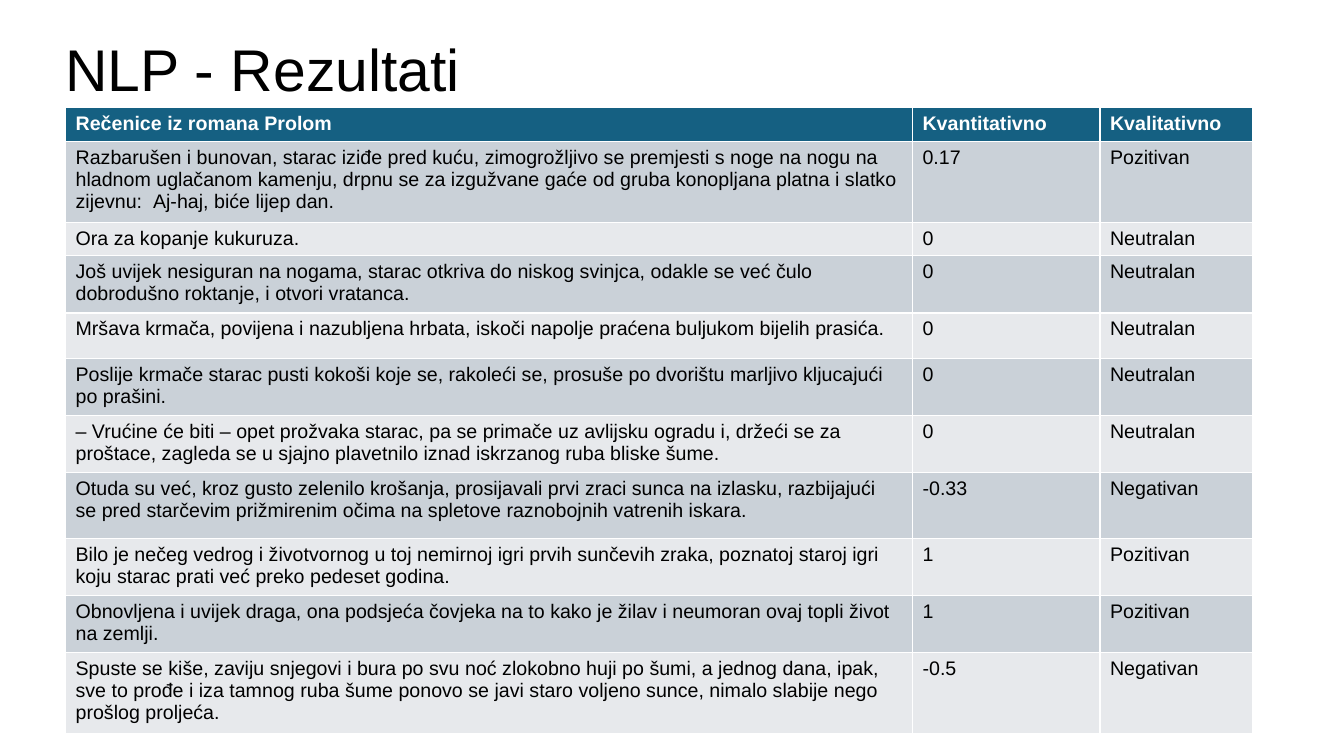
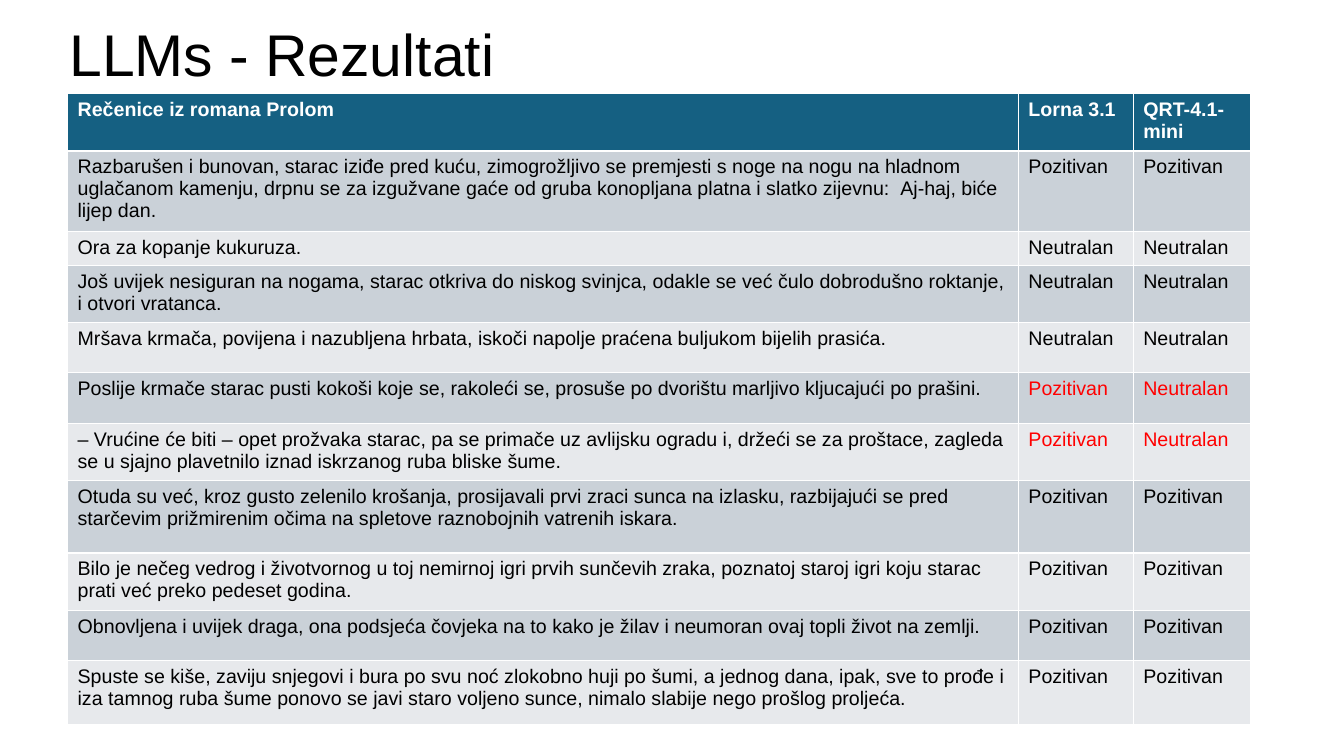
from dataclasses import dataclass

from pptx import Presentation
from pptx.dml.color import RGBColor as RGB
from pptx.enum.text import MSO_ANCHOR as Anchor
from pptx.util import Inches, Pt

COLORS = {
    "text": "000000",
    "header": "156082",
    "header_text": "FFFFFF",
    "band_dark": "CAD1D8",
    "band_light": "E7E9EC",
    "mismatch": "FF0000",
}
TITLE_FONT = {"name": "Arial", "size": Pt(42), "bold": False}
HEADER_FONT = {"name": "Arial", "size": Pt(14), "bold": True}
BODY_FONT = {**HEADER_FONT, "bold": False}

# The title sits in the upper part of its frame, clear of the table
TITLE_FRAME = {
    "word_wrap": True,
    "vertical_anchor": Anchor.MIDDLE,
    "margin_bottom": Inches(0.76),
}
TITLE_SIZE = (11.5, 1.45)

SENTENCES = (
    "Razbarušen i bunovan, starac iziđe pred kuću, zimogrožljivo se premjesti s noge na nogu "
    "na hladnom uglačanom kamenju, drpnu se za izgužvane gaće od gruba konopljana platna "
    "i slatko zijevnu:  Аj-haj, biće lijep dan.",
    "Ora za kopanje kukuruza.",
    "Još uvijek nesiguran na nogama, starac otkriva do niskog svinjca, odakle se već čulo "
    "dobrodušno roktanje, i otvori vratanca.",
    "Mršava krmača, povijena i nazubljena hrbata, iskoči napolje praćena buljukom "
    "bijelih prasića.",
    "Poslije krmače starac pusti kokoši koje se, rakoleći se, prosuše po dvorištu marljivo "
    "kljucajući po prašini.",
    "– Vrućine će biti – opet prožvaka starac, pa se primače uz avlijsku ogradu i, držeći se "
    "za proštace, zagleda se u sjajno plavetnilo iznad iskrzanog ruba bliske šume.",
    "Otuda su već, kroz gusto zelenilo krošanja, prosijavali prvi zraci sunca na izlasku, "
    "razbijajući se pred starčevim prižmirenim očima na spletove raznobojnih vatrenih iskara.",
    "Bilo je nečeg vedrog i životvornog u toj nemirnoj igri prvih sunčevih zraka, poznatoj "
    "staroj igri koju starac prati već preko pedeset godina.",
    "Obnovljena i uvijek draga, ona podsjeća čovjeka na to kako je žilav i neumoran ovaj "
    "topli život na zemlji.",
    "Spuste se kiše, zaviju snjegovi i bura po svu noć zlokobno huji po šumi, a jednog dana, "
    "ipak, sve to prođe i iza tamnog ruba šume ponovo se javi staro voljeno sunce, "
    "nimalo slabije nego prošlog proljeća.",
)
POS, NEU, NEG = "Pozitivan", "Neutralan", "Negativan"


@dataclass(frozen=True)
class Results:
    title: str
    title_at: tuple[float, float]
    table_at: tuple[float, float]
    col_widths: tuple[float, ...]
    row_heights: tuple[float, ...]
    methods: tuple[str, str]
    ratings: tuple[tuple[str, ...], tuple[str, ...]]  # one column per method
    mismatches: tuple[int, ...] = ()  # table rows where the methods disagree


RESULTS = (
    Results(
        title="NLP - Rezultati",
        title_at=(0.55, 0.35),
        table_at=(0.65, 1.07),
        col_widths=(8.4, 1.86, 1.51),
        row_heights=(0.32, 0.76, 0.32, 0.54, 0.45, 0.54, 0.54, 0.65, 0.54, 0.54, 0.76),
        methods=("Kvantitativno", "Kvalitativno"),
        ratings=(
            ("0.17", "0", "0", "0", "0", "0", "-0.33", "1", "1", "-0.5"),
            (POS, *[NEU] * 5, NEG, POS, POS, NEG),
        ),
    ),
    Results(
        title="LLMs - Rezultati",
        title_at=(0.59, 0.2),
        table_at=(0.67, 0.93),
        col_widths=(9.43, 1.14, 1.16),
        row_heights=(0.33, 0.72, 0.33, 0.5, 0.5, 0.5, 0.5, 0.72, 0.5, 0.5, 0.64),
        methods=("Lorna 3.1", "QRT-4.1-mini"),
        ratings=(
            (POS, *[NEU] * 3, *[POS] * 6),
            (POS, *[NEU] * 5, *[POS] * 4),
        ),
        mismatches=(5, 6),
    ),
)


def write(frame, text: str, font_format: dict, color: str) -> None:
    run = frame.paragraphs[0].add_run()
    run.text = text
    for attribute, value in font_format.items():
        setattr(run.font, attribute, value)
    run.font.color.rgb = RGB.from_string(COLORS[color])


def add_title(slide, results: Results) -> None:
    box = slide.shapes.add_textbox(*map(Inches, results.title_at + TITLE_SIZE))
    for attribute, value in TITLE_FRAME.items():
        setattr(box.text_frame, attribute, value)
    box.text_frame.paragraphs[0].line_spacing = 0.9
    write(box.text_frame, results.title, TITLE_FONT, "text")


def cell_style(results: Results, row: int, col: int) -> tuple[str, dict, str]:
    """Return the fill, font format and text colour of a cell."""
    if row == 0:
        return "header", HEADER_FONT, "header_text"
    fill = "band_dark" if row % 2 else "band_light"
    differs = col > 0 and row in results.mismatches
    return fill, BODY_FONT, "mismatch" if differs else "text"


def add_results_table(slide, results: Results) -> None:
    # The default table style supplies the white rules between cells
    rows = [("Rečenice iz romana Prolom", *results.methods), *zip(SENTENCES, *results.ratings)]
    size = (sum(results.col_widths), sum(results.row_heights))
    table = slide.shapes.add_table(
        len(rows), len(results.col_widths), *map(Inches, results.table_at + size)
    ).table
    for column, width in zip(table.columns, results.col_widths):
        column.width = Inches(width)
    for table_row, height in zip(table.rows, results.row_heights):
        table_row.height = Inches(height)

    for r, texts in enumerate(rows):
        for c, text in enumerate(texts):
            cell = table.cell(r, c)
            fill, font_format, color = cell_style(results, r, c)
            cell.fill.solid()
            cell.fill.fore_color.rgb = RGB.from_string(COLORS[fill])
            write(cell.text_frame, text, font_format, color)


def main() -> None:
    deck = Presentation()
    deck.slide_width, deck.slide_height = Inches(13.33), Inches(7.5)
    blank = deck.slide_layouts[6]
    for results in RESULTS:
        slide = deck.slides.add_slide(blank)
        add_title(slide, results)
        add_results_table(slide, results)
    deck.save("out.pptx")


if __name__ == "__main__":
    main()
